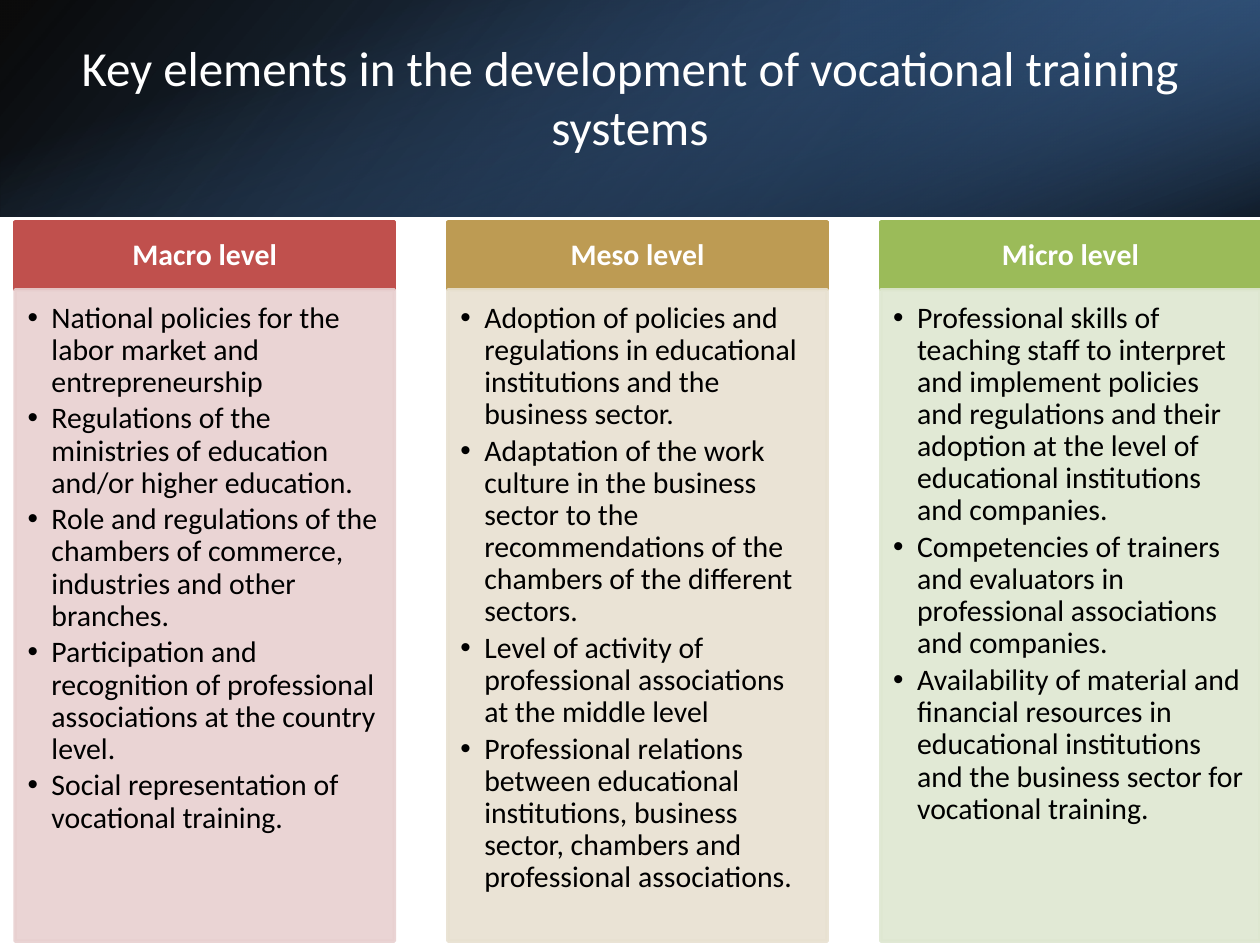
from lxml import etree
from pptx import Presentation
from pptx.dml.color import RGBColor
from pptx.enum.shapes import MSO_SHAPE
from pptx.enum.text import MSO_ANCHOR, MSO_AUTO_SIZE, PP_ALIGN
from pptx.oxml.ns import qn
from pptx.util import Inches, Pt

RECTANGLE = MSO_SHAPE.RECTANGLE
TOP, MIDDLE = MSO_ANCHOR.TOP, MSO_ANCHOR.MIDDLE
LEFT, CENTER = PP_ALIGN.LEFT, PP_ALIGN.CENTER
FIT_SHAPE = MSO_AUTO_SIZE.SHAPE_TO_FIT_TEXT

WHITE = RGBColor(0xFF, 0xFF, 0xFF)
BLACK = RGBColor(0x00, 0x00, 0x00)
BLUE = RGBColor(0x4F, 0x81, 0xBD)
DEEP_BLUE = RGBColor(0x37, 0x60, 0x92)
NAVY = RGBColor(0x25, 0x40, 0x61)
RED = RGBColor(0xC0, 0x50, 0x4D)
PALE_RED = RGBColor(0xE8, 0xD0, 0xD0)
GOLD = RGBColor(0xBD, 0x9B, 0x53)
PALE_GOLD = RGBColor(0xE8, 0xE1, 0xD1)
GREEN = RGBColor(0x9B, 0xBB, 0x59)
PALE_GREEN = RGBColor(0xDE, 0xE7, 0xD1)

SLIDE_WIDTH, SLIDE_HEIGHT = 10, 7.5
BANNER_HEIGHT = 1.72
COLUMN_LEFT, COLUMN_WIDTH = 0.12, 3.01
HEADER_TOP, HEADER_HEIGHT, BODY_HEIGHT = 1.76, 0.54, 5.17

BANNER_LAYERS = [
    ((0, 0, SLIDE_WIDTH, BANNER_HEIGHT), 0, True, 140,
     [(0, BLACK, 96), (1, DEEP_BLUE, 100)]),
    ((6.67, 0, 3.33, BANNER_HEIGHT), 180, True, 320,
     [(0.19, NAVY, 68), (1, BLUE, 79)]),
    ((4.14, -4.14, BANNER_HEIGHT, SLIDE_WIDTH), 90, False, 340,
     [(0.23, BLUE, 0), (0.99, BLACK, 74)]),
]

LEVELS = [
    ("Macro level", RED, PALE_RED, [
        "National policies for the labor market and entrepreneurship",
        "Regulations of the ministries of education and/or higher education.",
        "Role and regulations of the chambers of commerce, industries and other branches.",
        "Participation and recognition of professional associations at the country level.",
        "Social representation of vocational training.",
    ]),
    ("Meso level", GOLD, PALE_GOLD, [
        "Adoption of policies and regulations in educational institutions and the business sector.",
        "Adaptation of the work culture in the business sector to the recommendations "
        "of the chambers of the different sectors.",
        "Level of activity of professional associations at the middle level",
        "Professional relations between educational institutions, business sector, "
        "chambers and professional associations.",
    ]),
    ("Micro level", GREEN, PALE_GREEN, [
        "Professional skills of teaching staff to interpret and implement policies and "
        "regulations and their adoption at the level of educational institutions and companies.",
        "Competencies of trainers and evaluators in professional associations and companies.",
        "Availability of material and financial resources in educational institutions "
        "and the business sector for vocational training.",
    ]),
]


class LevelSlide:
    """Draws the banner, title and level columns in one style."""

    font_name = "Calibri"
    header_frame = {"vertical_anchor": MIDDLE, "margin_left": Inches(0.13),
                    "margin_right": Inches(0.13), "margin_top": Inches(0.08),
                    "margin_bottom": Inches(0.08)}
    body_frame = {"vertical_anchor": TOP, "margin_left": Inches(0.1),
                  "margin_right": Inches(0.13), "margin_top": Inches(0.1),
                  "margin_bottom": Inches(0.15)}
    header_paragraph = {"alignment": CENTER, "line_spacing": 0.9, "space_after": Pt(6)}
    body_paragraph = {"alignment": LEFT, "line_spacing": 0.9, "space_after": Pt(2.55),
                      "level": 1}

    def __init__(self, slide):
        self.slide = slide

    @staticmethod
    def apply(target, values):
        for name, value in values.items():
            setattr(target, name, value)

    @staticmethod
    def set_opacity(color, percent):
        etree.SubElement(color, qn("a:alpha")).set("val", str(percent * 1000))

    def rectangle(self, box):
        rectangle = self.slide.shapes.add_shape(RECTANGLE, *map(Inches, box))
        rectangle.shadow.inherit = False
        return rectangle

    def banner_layer(self, box, rotation, flipped, angle, stops):
        layer = self.rectangle(box)
        layer.rotation = rotation
        properties = layer._element.spPr
        if flipped:
            properties.find(qn("a:xfrm")).set("flipH", "1")
        layer.fill.gradient()
        layer.fill.gradient_angle = 360 - angle
        for stop, (position, color, _) in zip(layer.fill.gradient_stops, stops):
            stop.position = position
            stop.color.rgb = color
        for color, (_, _, opacity) in zip(properties.iter(qn("a:srgbClr")), stops):
            self.set_opacity(color, opacity)
        layer.line.fill.background()

    def panel(self, box, color, opacity=100):
        panel = self.rectangle(box)
        panel.fill.solid()
        panel.fill.fore_color.rgb = color
        panel.line.color.rgb = color
        panel.line.width = Pt(2)
        if opacity < 100:
            for tint in panel._element.spPr.iter(qn("a:srgbClr")):
                self.set_opacity(tint, opacity)
        return panel.text_frame

    def set_text(self, frame, lines, frame_format, paragraph_format, size, color, bold=False):
        self.apply(frame, {"word_wrap": True, **frame_format})
        for index, line in enumerate(lines):
            paragraph = frame.add_paragraph() if index else frame.paragraphs[0]
            self.apply(paragraph, paragraph_format)
            run = paragraph.add_run()
            run.text = line
            self.apply(run.font, {"name": self.font_name, "size": Pt(size), "bold": bold})
            run.font.color.rgb = color

    def bullet(self, paragraph):
        properties = paragraph._p.get_or_add_pPr()
        properties.set("marL", str(Inches(0.19)))
        properties.set("indent", str(Inches(-0.19)))
        etree.SubElement(properties, qn("a:buFont")).set("typeface", "Arial")
        etree.SubElement(properties, qn("a:buChar")).set("char", "•")

    def column(self, left, heading, color, tint, points):
        header = self.panel((left, HEADER_TOP, COLUMN_WIDTH, HEADER_HEIGHT), color)
        self.set_text(header, [heading], self.header_frame, self.header_paragraph,
                      17, WHITE, True)
        body_top = HEADER_TOP + HEADER_HEIGHT
        body = self.panel((left, body_top, COLUMN_WIDTH, BODY_HEIGHT), tint, 90)
        self.set_text(body, points, self.body_frame, self.body_paragraph, 17, BLACK)
        for paragraph in body.paragraphs:
            self.bullet(paragraph)

    def title(self, text, box):
        title = self.slide.shapes.add_textbox(*map(Inches, box))
        self.set_text(title.text_frame, [text], {"auto_size": FIT_SHAPE},
                      {"alignment": CENTER}, 28, WHITE)


def main():
    presentation = Presentation()
    presentation.slide_width = Inches(SLIDE_WIDTH)
    presentation.slide_height = Inches(SLIDE_HEIGHT)
    page = LevelSlide(presentation.slides.add_slide(presentation.slide_layouts[6]))
    for layer in BANNER_LAYERS:
        page.banner_layer(*layer)
    pitch = (SLIDE_WIDTH - COLUMN_LEFT - COLUMN_WIDTH) / (len(LEVELS) - 1)
    for index, level in enumerate(LEVELS):
        page.column(COLUMN_LEFT + index * pitch, *level)
    page.title("Key elements in the development of vocational training systems",
               (0, 0.25, SLIDE_WIDTH, 1.04))
    presentation.save("out.pptx")


if __name__ == "__main__":
    main()
